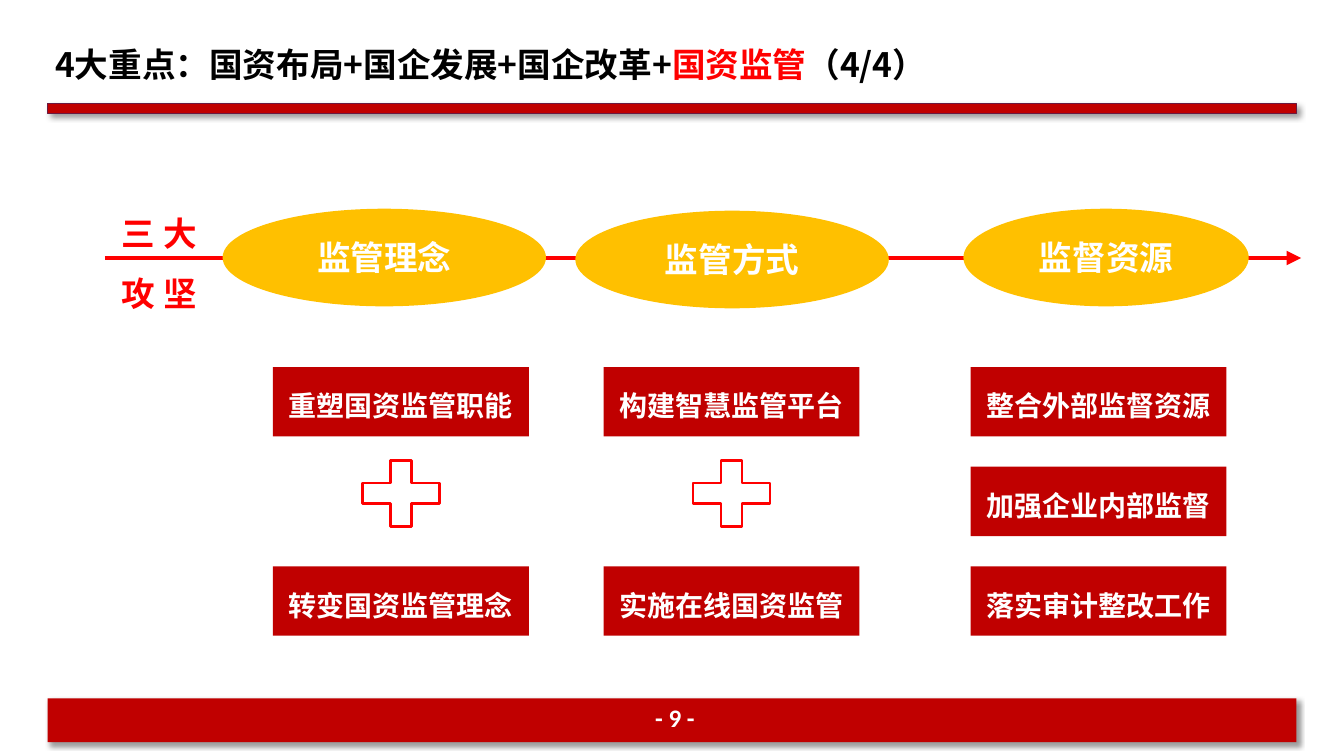
from dataclasses import dataclass

from lxml import etree
from pptx import Presentation
from pptx.dml.color import RGBColor
from pptx.enum.shapes import MSO_CONNECTOR, MSO_SHAPE
from pptx.enum.text import MSO_ANCHOR, PP_ALIGN
from pptx.oxml.ns import qn
from pptx.shapes.autoshape import Shape
from pptx.slide import Slide
from pptx.text.text import TextFrame
from pptx.util import Cm, Pt

RECT, OVAL, PLUS = MSO_SHAPE.RECTANGLE, MSO_SHAPE.OVAL, MSO_SHAPE.MATH_PLUS
LINE = MSO_CONNECTOR.STRAIGHT
TOP, MIDDLE = MSO_ANCHOR.TOP, MSO_ANCHOR.MIDDLE
CENTER, JUSTIFY = PP_ALIGN.CENTER, PP_ALIGN.JUSTIFY

COLORS = {"dark": "C00000", "red": "FF0000", "gold": "FFC000",
          "edge": "6A1A41", "white": "FFFFFF", "black": "000000"}
HAN, LATIN = "Noto Sans CJK SC", "Calibri"

# Card grid, in centimetres
CARD_W, CARD_H = 6.45, 1.75
ROW_TOP, ROW_STEP = 9.25, 2.51
PLUS_W, PLUS_H = 2.64, 2.24


@dataclass
class Box:
    left: float
    top: float
    width: float
    height: float

    def lengths(self) -> tuple[Cm, Cm, Cm, Cm]:
        return Cm(self.left), Cm(self.top), Cm(self.width), Cm(self.height)


@dataclass
class Theme:
    name: str
    oval: Box
    left: float
    cards: dict[int, str]
    plus: bool


THEMES = [
    Theme("监管理念", Box(5.61, 5.26, 8.15, 2.46), 6.88,
          {0: "重塑国资监管职能", 2: "转变国资监管理念"}, True),
    Theme("监管方式", Box(14.5, 5.31, 7.9, 2.46), 15.21,
          {0: "构建智慧监管平台", 2: "实施在线国资监管"}, True),
    Theme("监督资源", Box(24.28, 5.26, 7.19, 2.46), 24.46,
          {0: "整合外部监督资源", 1: "加强企业内部监督", 2: "落实审计整改工作"}, False),
]
TITLE = [("4大重点：国资布局+国企发展+国企改革+", "black"),
         ("国资监管", "red"), ("（4/4）", "black")]


def rgb(name: str) -> RGBColor:
    return RGBColor.from_string(COLORS[name])


def write(frame: TextFrame, lines: list[list[tuple[str, str]]], size: int,
          font: str = HAN, align: PP_ALIGN = CENTER, anchor: MSO_ANCHOR = TOP,
          space: float = 1) -> None:
    """Fill the frame with lines made of (text, colour) runs."""
    frame.word_wrap = True
    frame.vertical_anchor = anchor
    for i, parts in enumerate(lines):
        para = frame.paragraphs[0] if i == 0 else frame.add_paragraph()
        para.alignment = align
        para.line_spacing = space
        para.font.size, para.font.bold, para.font.name = Pt(size), True, font
        same = len({color for _, color in parts}) == 1
        if same:
            para.font.color.rgb = rgb(parts[0][1])
        props = para._p.pPr.find(qn("a:defRPr"))
        etree.SubElement(props, qn("a:ea"), typeface=font)
        for text, color in parts:
            run = para.add_run()
            run.text = text
            if not same:
                run.font.color.rgb = rgb(color)


def draw(slide: Slide, kind: MSO_SHAPE, box: Box, fill: str,
         edge: str | None = None, width: float = 1) -> Shape:
    shape = slide.shapes.add_shape(kind, *box.lengths())
    shape.shadow.inherit = False
    shape.fill.solid()
    shape.fill.fore_color.rgb = rgb(fill)
    if edge:
        shape.line.color.rgb = rgb(edge)
        shape.line.width = Pt(width)
    else:
        shape.line.fill.background()
    return shape


def shade(shape: Shape) -> None:
    """Give a bar a soft shadow towards the lower right."""
    effects = shape._element.spPr.find(qn("a:effectLst"))
    outer = etree.SubElement(effects, qn("a:outerShdw"), blurRad=str(Pt(4)),
                             dist=str(Pt(3)), dir=str(45 * 60000),
                             algn="tl", rotWithShape="0")
    color = etree.SubElement(outer, qn("a:srgbClr"), val=COLORS["black"])
    etree.SubElement(color, qn("a:alpha"), val="40000")


def arrow(slide: Slide, start: float, end: float, level: float) -> None:
    line = slide.shapes.add_connector(LINE, Cm(start), Cm(level), Cm(end), Cm(level))
    line.line.color.rgb = rgb("red")
    line.line.width = Pt(3.5)
    etree.SubElement(line.line._get_or_add_ln(), qn("a:tailEnd"), type="triangle")
    etree.SubElement(line._element.spPr, qn("a:effectLst"))


def label(slide: Slide, box: Box) -> TextFrame:
    return slide.shapes.add_textbox(*box.lengths()).text_frame


def column(slide: Slide, theme: Theme) -> None:
    oval = draw(slide, OVAL, theme.oval, "gold")
    write(oval.text_frame, [[(theme.name, "white")]], 24, anchor=MIDDLE)
    for row, text in theme.cards.items():
        box = Box(theme.left, ROW_TOP + row * ROW_STEP, CARD_W, CARD_H)
        card = draw(slide, RECT, box, "dark")
        write(card.text_frame, [[(text, "white")]], 20, space=1.5)
    if theme.plus:
        box = Box(theme.left + (CARD_W - PLUS_W) / 2,
                  ROW_TOP + ROW_STEP + (CARD_H - PLUS_H) / 2 - 0.2, PLUS_W, PLUS_H)
        draw(slide, PLUS, box, "white", "red", 2)


def main() -> None:
    deck = Presentation()
    deck.slide_width, deck.slide_height = Cm(33.87), Cm(19.05)
    slide = deck.slides.add_slide(deck.slide_layouts[6])

    # Footer and page number
    shade(draw(slide, RECT, Box(1.2, 17.6, 31.47, 1.1), "dark"))
    page = label(slide, Box(15.88, 17.6, 2.26, 0.97))
    page.margin_left = page.margin_right = Cm(0.2)
    page.margin_top = page.margin_bottom = Cm(0.1)
    write(page, [[("- 9 -", "white")]], 18, LATIN)

    # Title and rule
    shade(draw(slide, RECT, Box(1.2, 2.62, 31.47, 0.25), "dark", "edge", 0.75))
    write(label(slide, Box(1.14, 0.99, 31.65, 1.27)), [TITLE], 24,
          align=JUSTIFY, anchor=MIDDLE)

    # Time line with its three themes
    arrow(slide, 2.64, 32.79, 6.5)
    for theme in THEMES:
        column(slide, theme)
    write(label(slide, Box(1.55, 4.72, 4.93, 2.46)),
          [[("三 大", "red")], [("攻 坚", "red")]], 24, space=1.5)

    deck.save("out.pptx")


if __name__ == "__main__":
    main()
